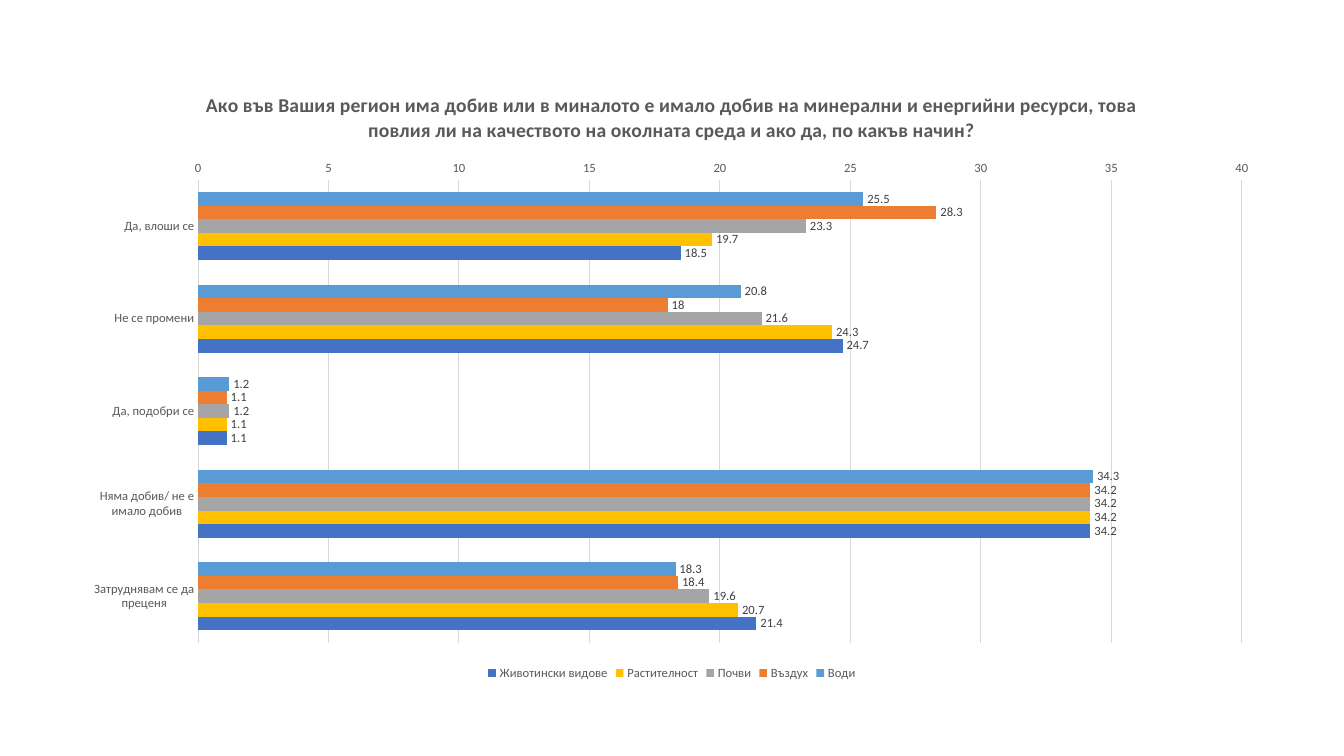
from dataclasses import dataclass

from pptx import Presentation
from pptx.chart import data as chart_data
from pptx.dml.color import RGBColor
from pptx.enum import chart as ec
from pptx.oxml import parse_xml
from pptx.oxml.ns import nsdecls, qn
from pptx.util import Pt

FONT = "Calibri"
TEXT_GREY = RGBColor(0x59, 0x59, 0x59)
LABEL_GREY = RGBColor(0x40, 0x40, 0x40)
LINE_GREY = RGBColor(0xD9, 0xD9, 0xD9)

TITLE = (
    "Ако във Вашия регион има добив или в миналото е имало добив на минерални "
    "и енергийни ресурси, това повлия ли на качеството на околната среда "
    "и ако да, по какъв начин?"
)
ANSWERS = (
    "Да, влоши се",
    "Не се промени",
    "Да, подобри се",
    "Няма добив/ не е имало добив",
    "Затруднявам се да преценя",
)


@dataclass(frozen=True)
class Factor:
    name: str
    color: RGBColor
    values: tuple[float, ...]


FACTORS = (
    Factor("Води", RGBColor(0x5B, 0x9B, 0xD5), (25.5, 20.8, 1.2, 34.3, 18.3)),
    Factor("Въздух", RGBColor(0xED, 0x7D, 0x31), (28.3, 18, 1.1, 34.2, 18.4)),
    Factor("Почви", RGBColor(0xA5, 0xA5, 0xA5), (23.3, 21.6, 1.2, 34.2, 19.6)),
    Factor("Растителност", RGBColor(0xFF, 0xC0, 0x00), (19.7, 24.3, 1.1, 34.2, 20.7)),
    Factor("Животински видове", RGBColor(0x44, 0x72, 0xC4), (18.5, 24.7, 1.1, 34.2, 21.4)),
)


def style_font(font, size: float, color: RGBColor, bold: bool = False) -> None:
    font.name = FONT
    font.size = Pt(size)
    font.bold = bold
    font.color.rgb = color


def style_line(line, color: RGBColor) -> None:
    line.color.rgb = color
    line.width = Pt(0.75)


def place_plot(chart, x: float, y: float, w: float, h: float) -> None:
    """Fix the inner plot area, in fractions of the chart frame."""
    plot_area = chart.element.find(".//" + qn("c:plotArea"))
    for layout in plot_area.findall(qn("c:layout")):
        plot_area.remove(layout)
    sizes = "".join(
        f'<c:{tag} val="{value}"/>' for tag, value in zip("xywh", (x, y, w, h))
    )
    plot_area.insert(0, parse_xml(
        f'<c:layout {nsdecls("c")}><c:manualLayout><c:layoutTarget val="inner"/>'
        f'<c:xMode val="edge"/><c:yMode val="edge"/>'
        f"{sizes}</c:manualLayout></c:layout>".replace('val="inner"', 'val="inner"')
    ))


def style_title(chart) -> None:
    frame = chart.chart_title.text_frame
    frame.text = TITLE
    style_font(frame.paragraphs[0].runs[0].font, 14, TEXT_GREY, bold=True)
    chart.chart_title.include_in_layout = False


def style_axes(chart) -> None:
    for axis in (chart.category_axis, chart.value_axis):
        axis.major_tick_mark = axis.minor_tick_mark = ec.XL_TICK_MARK.NONE
        style_font(axis.tick_labels.font, 9, TEXT_GREY)
    answers, percent = chart.category_axis, chart.value_axis
    answers.reverse_order = True
    style_line(answers.format.line, LINE_GREY)
    percent.minimum_scale, percent.maximum_scale, percent.major_unit = 0, 40, 5
    percent.format.line.fill.background()
    percent.has_major_gridlines = True
    style_line(percent.major_gridlines.format.line, LINE_GREY)


def style_bars(chart) -> None:
    plot = chart.plots[0]
    plot.gap_width, plot.overlap = 182, 0
    plot.vary_by_categories = False
    for series, factor in zip(plot.series, FACTORS):
        series.format.fill.solid()
        series.format.fill.fore_color.rgb = factor.color
        series.invert_if_negative = False
        labels = series.data_labels
        labels.show_value = True
        labels.position = ec.XL_LABEL_POSITION.OUTSIDE_END
        style_font(labels.font, 9, LABEL_GREY)


def style_legend(chart) -> None:
    chart.has_legend = True
    chart.legend.position = ec.XL_LEGEND_POSITION.BOTTOM
    chart.legend.include_in_layout = False
    style_font(chart.legend.font, 9, TEXT_GREY)


def main() -> None:
    deck = Presentation()
    deck.slide_width, deck.slide_height = Pt(960), Pt(540)
    page = deck.slides.add_slide(deck.slide_layouts[6])

    survey = chart_data.CategoryChartData()
    survey.categories = ANSWERS
    for factor in FACTORS:
        survey.add_series(factor.name, factor.values)
    chart = page.shapes.add_chart(
        ec.XL_CHART_TYPE.BAR_CLUSTERED, Pt(50.4), Pt(50.4), Pt(859), Pt(438.5), survey
    ).chart
    chart.font.name, chart.font.size = FONT, Pt(10)

    style_title(chart)
    style_axes(chart)
    style_bars(chart)
    style_legend(chart)
    place_plot(chart, x=0.106, y=0.178, w=0.868, h=0.754)
    deck.save("out.pptx")


if __name__ == "__main__":
    main()
